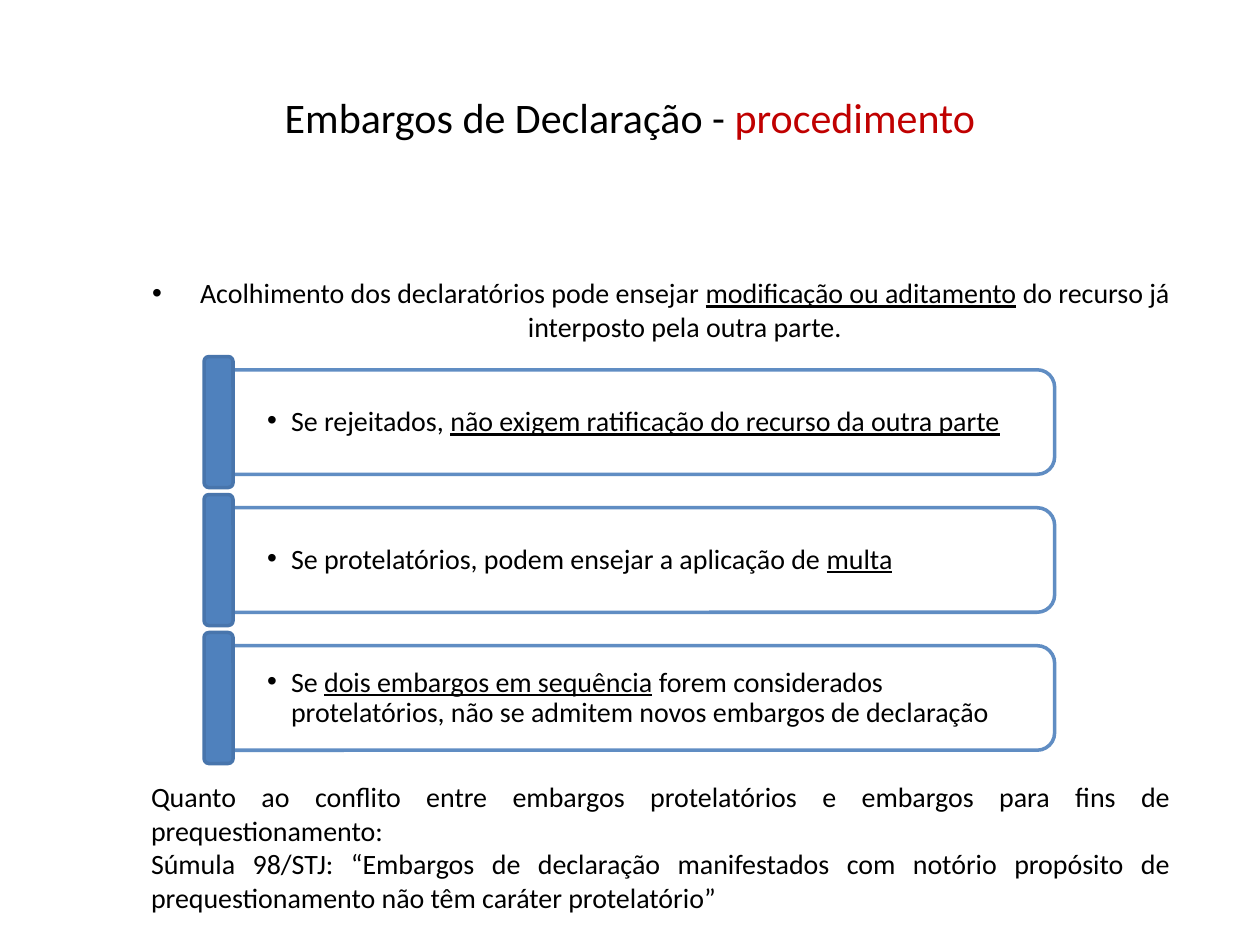
"""Build a slide on the procedure of embargos de declaração."""
from pptx import Presentation
from pptx.dml.color import RGBColor
from pptx.enum.shapes import MSO_SHAPE as Shape
from pptx.enum.text import MSO_ANCHOR as Anchor, PP_ALIGN as Align
from pptx.oxml.ns import qn
from pptx.util import Inches, Pt
from lxml.etree import SubElement

BLACK, RED, BLUE, DARK_BLUE, WHITE = "000000", "C00000", "4F81BD", "4875AC", "FFFFFF"
TITLE = [("Embargos de Declaração - ", {}), ("procedimento", {"color": RED})]
INTRO = [
    ("Acolhimento dos declaratórios pode ensejar ", {}),
    ("modificação ou aditamento", {"underline": True}),
    (" do recurso já interposto pela outra parte.", {}),
]
CASES = [
    [("Se rejeitados, ", {}),
     ("não exigem ratificação do recurso da outra parte", {"underline": True})],
    [("Se protelatórios, podem ensejar a aplicação de ", {}),
     ("multa", {"underline": True})],
    [("Se ", {}),
     ("dois embargos em sequência", {"underline": True}),
     (" forem considerados protelatórios, não se admitem novos embargos de declaração", {})],
]
CLOSING = [
    [("Quanto ao conflito entre embargos protelatórios e embargos para fins de prequestionamento:", {})],
    [("Súmula 98/STJ: “Embargos de declaração manifestados com notório propósito de "
      "prequestionamento não têm caráter protelatório”", {})],
]
BODY_LEFT, BODY_WIDTH = 1.1, 8.29
TAB_LEFT, TAB_TOP, TAB_W, TAB_H, PITCH = 1.62, 2.83, 0.23, 1.04, 1.095
PANEL_W, PANEL_H = 6.52, 0.83
TEXT_W, TEXT_H = 6.48, 0.75


def rgb(value):
    return RGBColor.from_string(value)


def add_text(s, box, paragraphs, size=16, align=Align.LEFT, anchor=Anchor.TOP,
             hang=0, spacing=None, insets=(0.1, 0.05)):
    tf = s.shapes.add_textbox(*map(Inches, box)).text_frame
    tf.word_wrap = True
    tf.vertical_anchor = anchor
    tf.margin_left = tf.margin_right = Inches(insets[0])
    tf.margin_top = tf.margin_bottom = Inches(insets[1])
    for i, runs in enumerate(paragraphs):
        p = tf.add_paragraph() if i else tf.paragraphs[0]
        p.alignment = align
        if spacing:
            p.line_spacing = spacing
        if hang:
            pPr = p._p.get_or_add_pPr()
            pPr.set("marL", str(Inches(hang)))
            pPr.set("indent", str(-Inches(hang)))
            SubElement(pPr, qn("a:buFont")).set("typeface", "Arial")
            SubElement(pPr, qn("a:buChar")).set("char", "•")
        for text, style in runs:
            r = p.add_run()
            r.text = text
            r.font.name = "Calibri"
            r.font.size = Pt(size)
            r.font.color.rgb = rgb(style.get("color", BLACK))
            if style.get("underline"):
                r.font.underline = True


def add_box(s, kind, box, fill, line, alpha=None):
    sp = s.shapes.add_shape(kind, *map(Inches, box))
    sp.shadow.inherit = False
    sp.fill.solid()
    sp.fill.fore_color.rgb = rgb(fill)
    sp.line.color.rgb = rgb(line)
    sp.line.width = Pt(2)
    if alpha:
        for color in sp._element.spPr.iter(qn("a:srgbClr")):
            SubElement(color, qn("a:alpha")).set("val", str(alpha * 1000))
    return sp


def add_case(s, top, runs):
    middle = top + TAB_H / 2
    panel_left = TAB_LEFT + TAB_W
    panel = (panel_left + (PANEL_W - PANEL_H) / 2, middle - PANEL_W / 2, PANEL_H, PANEL_W)
    add_box(s, Shape.ROUND_2_SAME_RECTANGLE, panel, WHITE, BLUE, 90).rotation = 90
    add_text(s, (panel_left, middle - TEXT_H / 2, TEXT_W, TEXT_H), [runs],
             anchor=Anchor.MIDDLE, hang=0.19, spacing=0.9, insets=(0.27, 0.14))
    add_box(s, Shape.ROUNDED_RECTANGLE, (TAB_LEFT, top, TAB_W, TAB_H), BLUE, DARK_BLUE)


def main():
    prs = Presentation()
    prs.slide_width, prs.slide_height = Inches(10), Inches(7.5)
    s = prs.slides.add_slide(prs.slide_layouts[6])
    add_text(s, (0.5, 0.3, 9, 1.25), [TITLE], size=24, align=Align.CENTER, anchor=Anchor.MIDDLE)
    add_text(s, (BODY_LEFT, 2.14, BODY_WIDTH, 0.65), [INTRO], align=Align.CENTER, hang=0.38)
    for i, runs in enumerate(CASES):
        add_case(s, TAB_TOP + i * PITCH, runs)
    add_text(s, (BODY_LEFT, 6.14, BODY_WIDTH, 1.2), CLOSING, align=Align.JUSTIFY)
    prs.save("out.pptx")


if __name__ == "__main__":
    main()
